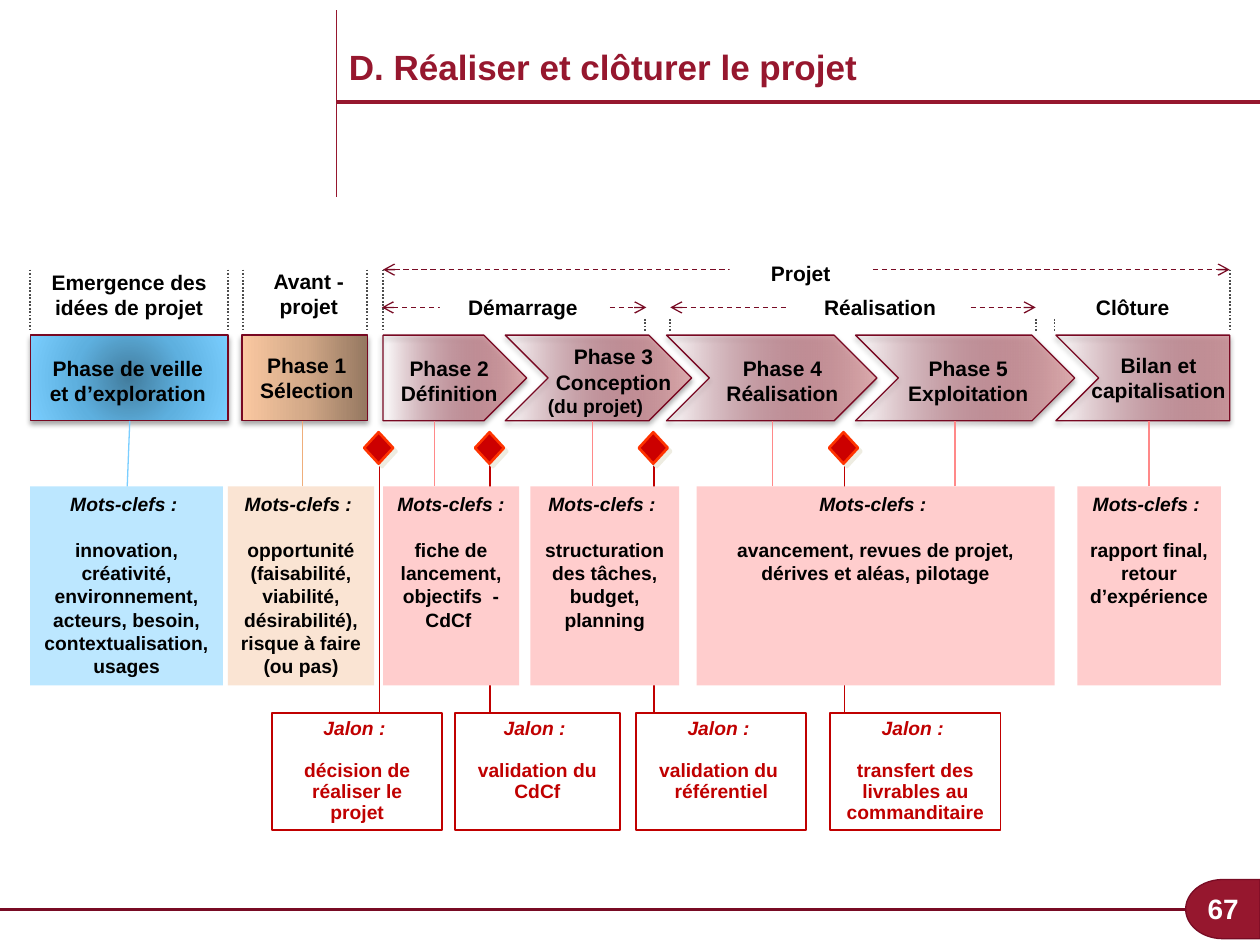
from dataclasses import dataclass
from typing import NamedTuple

import pptx
import pptx.dml.color
import pptx.enum.dml
import pptx.enum.shapes
import pptx.enum.text
import pptx.oxml
import pptx.oxml.ns
import pptx.util

Inches = pptx.util.Inches
Pt = pptx.util.Pt
Shape = pptx.enum.shapes.MSO_SHAPE
Align = pptx.enum.text.PP_ALIGN
Dash = pptx.enum.dml.MSO_LINE


class Box(NamedTuple):
    """A region of the page, in inches."""
    left: float
    top: float
    width: float
    height: float

    def inner(self, left, top, width, height):
        """Return a box placed relative to this one."""
        return Box(self.left + left, self.top + top, width, height)


@dataclass(frozen=True)
class Theme:
    """Colours and type sizes of the slide."""
    font: str = "Arial"
    title: int = 20
    number: int = 16
    label: int = 12
    note: int = 11
    black: str = "000000"
    white: str = "FFFFFF"
    wine: str = "96172E"
    dark_wine: str = "780B24"
    outline: str = "780822"
    grey: str = "4D4D4D"
    milestone: str = "C00000"
    diamond: str = "CC0000"
    diamond_edge: str = "FF3300"
    diamond_shadow: str = "EEECE1"
    sky: str = "BCE7FF"
    sky_line: str = "7ACEFF"
    sand: str = "FAE4D3"
    sand_line: str = "EFAE7B"
    rose: str = "FFCDCD"
    rose_line: str = "FF8989"
    blue_stops: tuple = ((0, "427C9D", 100), (50, "5EB0DF", 100), (100, "7ACEFF", 100))
    sand_stops: tuple = ((0, "947760", 100), (50, "D3A988", 100), (100, "FAC8A1", 100))
    wine_stops: tuple = ((0, "83001E", 0), (100, "DCACAE", 100))
    clipped_stops: tuple = ((0, "83001E", 0), (100, "CA8A91", 80))


THEME = Theme()
RADIAL = ('<a:path path="circle"><a:fillToRect l="50000" t="50000" '
          'r="50000" b="50000"/></a:path>')
RIGHTWARD = '<a:lin ang="0" scaled="0"/>'
LEFTWARD = '<a:lin ang="10800000" scaled="0"/>'


def rgb(color):
    """Return a colour object for a hex string."""
    return pptx.dml.color.RGBColor.from_string(color)


def xml(body):
    """Build a drawing element written without its namespace."""
    tag, rest = body[:body.index(" ")], body[body.index(" "):]
    return pptx.oxml.parse_xml(f"{tag} {pptx.oxml.ns.nsdecls('a')}{rest}")


def add_line(page, start, end, color, width=0.75, dash=None, arrows=False):
    """Add a straight line, with open arrowheads at both ends if asked."""
    line = page.shapes.add_connector(pptx.enum.shapes.MSO_CONNECTOR.STRAIGHT,
                                     *map(Inches, start + end))
    line.line.color.rgb = rgb(color)
    line.line.width = Pt(width)
    if dash is not None:
        line.line.dash_style = dash
    properties = line._element.spPr
    if arrows:
        outline = properties.find(pptx.oxml.ns.qn("a:ln"))
        for end_name in ("headEnd", "tailEnd"):
            outline.append(xml(f'<a:{end_name} type="arrow"/>'))
    properties.append(properties.makeelement(pptx.oxml.ns.qn("a:effectLst"), {}))


def style(shape, fill=None, line=None, width=0.75):
    """Set fill and outline and drop the shadow."""
    shape.shadow.inherit = False
    if fill:
        shape.fill.solid()
        shape.fill.fore_color.rgb = rgb(fill)
    else:
        shape.fill.background()
    if line:
        shape.line.color.rgb = rgb(line)
        shape.line.width = Pt(width)
    else:
        shape.line.fill.background()


def add_shape(page, kind, box, fill=None, line=None, width=0.75):
    """Add a styled preset shape."""
    shape = page.shapes.add_shape(kind, *map(Inches, box))
    style(shape, fill, line, width)
    return shape


def add_shadow(shape, color, alpha, blur, distance, angle):
    """Give a shape an outer shadow."""
    effects = shape._element.spPr.find(pptx.oxml.ns.qn("a:effectLst"))
    effects.append(xml(
        f'<a:outerShdw blurRad="{Pt(blur)}" dist="{Pt(distance)}" dir="{angle * 60000}">'
        f'<a:srgbClr val="{color}"><a:alpha val="{alpha * 1000}"/></a:srgbClr></a:outerShdw>'))


def add_gradient(shape, stops, direction):
    """Replace the empty fill of a shape by a gradient."""
    marks = "".join(f'<a:gs pos="{place * 1000}"><a:srgbClr val="{color}">'
                    f'<a:alpha val="{alpha * 1000}"/></a:srgbClr></a:gs>'
                    for place, color, alpha in stops)
    properties = shape._element.spPr
    properties.replace(properties.find(pptx.oxml.ns.qn("a:noFill")), xml(
        f'<a:gradFill rotWithShape="1"><a:gsLst>{marks}</a:gsLst>{direction}</a:gradFill>'))


def write(shape, texts, size, color=THEME.black, align=Align.CENTER, wrap=True,
          italic_first=False, gap=0, spacing=None, anchor=pptx.enum.text.MSO_ANCHOR.TOP):
    """Write bold paragraphs into a shape."""
    frame = shape.text_frame
    frame.word_wrap = wrap
    frame.vertical_anchor = anchor
    for index, text in enumerate(texts):
        para = frame.add_paragraph() if index else frame.paragraphs[0]
        para.alignment = align
        if spacing:
            para.line_spacing = spacing
        if index:
            para.space_before = Pt(gap)
        span = para.add_run()
        span.text = text
        span.font.name = THEME.font
        span.font.size = Pt(size)
        span.font.bold = True
        span.font.italic = italic_first and index == 0
        span.font.color.rgb = rgb(color)


def add_label(page, box, text, size=THEME.label, **options):
    """Add a text box with one bold paragraph."""
    write(page.shapes.add_textbox(*map(Inches, box)), [text], size, **options)


def add_title(page, box):
    """Draw the title and its crossed rules."""
    rule = box.top + 0.73
    add_line(page, (box.left, rule), (box.left + box.width, rule), THEME.wine, 2.25)
    add_line(page, (box.left, box.top), (box.left, box.top + box.height), THEME.wine, 1)
    add_label(page, box.inner(0, 0.23, 5.38, 0.44), "D. Réaliser et clôturer le projet",
              THEME.title, color=THEME.wine, align=Align.LEFT)


def add_footer(page, box):
    """Draw the bottom rule and the page number."""
    middle = box.top + 0.24
    add_line(page, (box.left, middle), (box.left + 9.41, middle), THEME.dark_wine, 2)
    tab = add_shape(page, Shape.FLOWCHART_DELAY, box.inner(9.41, 0, 0.59, box.height),
                    THEME.wine, THEME.dark_wine)
    tab.rotation = 180
    add_label(page, box.inner(7.6, 0.03, 2.33, 0.4), "67", THEME.number, color=THEME.white,
              align=Align.RIGHT, anchor=pptx.enum.text.MSO_ANCHOR.MIDDLE)


def add_spans(page, box):
    """Draw the dotted limits and the named spans above the phases."""
    bottom = box.top + box.height
    limits = [(x, 0.49) for x in (0.24, 1.81, 1.93, 2.91, 3.04, 9.76)]
    limits += [(x, 0.1) for x in (5.12, 5.32, 8.22, 8.37)]
    for x, height in limits:
        add_line(page, (box.left + x, bottom - height), (box.left + x, bottom),
                 THEME.grey, 1, Dash.ROUND_DOT)
    for start, end, y in ((3.04, 9.76, 0.12), (3.03, 5.13, 0.42), (5.32, 8.22, 0.42)):
        add_line(page, (box.left + start, box.top + y), (box.left + end, box.top + y),
                 THEME.dark_wine, dash=Dash.DASH, arrows=True)
    for x, y, width, text in ((5.79, 0, 1.13, "Projet"), (3.49, 0.27, 1.32, "Démarrage"),
                              (6.27, 0.27, 1.43, "Réalisation"), (8.57, 0.27, 0.84, "Clôture")):
        shape = add_shape(page, Shape.RECTANGLE, box.inner(x, y, width, 0.3), THEME.white)
        write(shape, [text], THEME.label)
    add_label(page, box.inner(0.3, 0.07, 1.45, 0.5), "Emergence des idées de projet")
    add_label(page, box.inner(2.04, 0.06, 0.82, 0.5), "Avant - projet")


def add_clipped_chevron(page, box):
    """Draw the last phase, a chevron cut straight on its right side."""
    notch = box.height / 2
    points = ((box.width, 0), (box.width, box.height), (0, box.height), (notch, notch))
    outline = page.shapes.build_freeform(Inches(box.left), Inches(box.top), 1)
    outline.add_line_segments([(Inches(box.left + x), Inches(box.top + y)) for x, y in points])
    shape = outline.convert_to_shape()
    style(shape, line=THEME.outline)
    return shape


def add_phases(page, box):
    """Draw the chain of phases and their names."""
    wine = (THEME.wine_stops, RIGHTWARD)
    phases = ((Shape.PENTAGON, 3.04, 1.14, *wine), (Shape.CHEVRON, 4.01, 1.48, *wine),
              (Shape.CHEVRON, 5.29, 1.67, *wine), (Shape.CHEVRON, 6.79, 1.74, *wine),
              (Shape.RECTANGLE, 0.24, 1.57, THEME.blue_stops, RADIAL),
              (Shape.RECTANGLE, 1.92, 1, THEME.sand_stops, LEFTWARD),
              (None, 8.38, 1.38, THEME.clipped_stops, RIGHTWARD))
    for kind, x, width, stops, direction in phases:
        place = box.inner(x, 0, width, box.height)
        if kind is None:
            shape = add_clipped_chevron(page, place)
        else:
            shape = add_shape(page, kind, place, line=THEME.outline)
        add_gradient(shape, stops, direction)
        add_shadow(shape, THEME.black, 35, 3.1, 1.8, 90)
    names = ((0.29, 0.11, 1.45, "Phase de veille et d’exploration"),
             (1.88, 0.09, 1.11, "Phase 1 Sélection"), (3.01, 0.11, 1.11, "Phase 2 Définition"),
             (4.3, 0.02, 1.14, "Phase 3 Conception"), (5.64, 0.11, 1.14, "Phase 4 Réalisation"),
             (7.05, 0.11, 1.27, "Phase 5 Exploitation"),
             (8.56, 0.09, 1.27, "Bilan et capitalisation"))
    for x, y, width, text in names:
        add_label(page, box.inner(x, y, width, 0.5), text)
    add_label(page, box.inner(4.25, 0.42, 0.96, 0.29), "(du projet)", THEME.note,
              align=Align.LEFT, wrap=False)


def add_keywords(page, box):
    """Draw the keyword cards and their links up to the phases."""
    rose = (THEME.rose, THEME.rose_line)
    cards = (
        (0.24, 1.53, THEME.sky, THEME.sky_line, ((1.01, 1.03),), "innovation, créativité, "
         "environnement, acteurs, besoin, contextualisation, usages"),
        (1.81, 1.16, THEME.sand, THEME.sand_line, ((2.4, 2.4),),
         "opportunité (faisabilité, viabilité, désirabilité), risque à faire (ou pas)"),
        (3.04, 1.08, *rose, ((3.45, 3.45),), "fiche de lancement, objectifs  - CdCf "),
        (4.21, 1.18, *rose, ((4.7, 4.7),), "structuration des tâches, budget, planning"),
        (5.53, 2.84, *rose, ((6.13, 6.13), (7.58, 7.58)),
         "avancement, revues de projet, dérives et aléas, pilotage"),
        (8.55, 1.14, *rose, ((9.12, 9.12),), "rapport final, retour d’expérience"))
    for x, width, fill, line, links, text in cards:
        card = add_shape(page, Shape.RECTANGLE, box.inner(x, 0, width, box.height), fill)
        write(card, ["Mots-clefs : ", text], THEME.note, italic_first=True, gap=13)
        for low, high in links:
            add_line(page, (box.left + low, box.top), (box.left + high, box.top - 0.52), line)


def add_milestones(page, box):
    """Draw the milestone diamonds, their stems and their cards."""
    milestones = ((3.01, 2.16, 1.35, "décision de réaliser le projet"),
                  (3.89, 3.61, 1.31, "validation du CdCf"),
                  (5.19, 5.05, 1.35, "validation du  référentiel"),
                  (6.7, 6.59, 1.35, "transfert des livrables au commanditaire"))
    for center, x, width, text in milestones:
        add_line(page, (box.left + center, box.top + 2.23), (box.left + center, box.top + 0.25),
                 THEME.milestone)
        diamond = add_shape(page, Shape.DIAMOND, box.inner(center - 0.12, 0, 0.23, 0.25),
                            THEME.diamond, THEME.diamond_edge, 1.5)
        add_shadow(diamond, THEME.diamond_shadow, 100, 0, 2.8, 45)
        card = add_shape(page, Shape.RECTANGLE, box.inner(x, 2.23, width, 0.93),
                         line=THEME.milestone, width=1)
        write(card, ["Jalon : ", text], THEME.note, THEME.milestone,
              italic_first=True, gap=12, spacing=0.9)


def main():
    """Build the slide and save it."""
    deck = pptx.Presentation()
    deck.slide_width, deck.slide_height = Inches(10), Inches(7.5)
    page = deck.slides.add_slide(deck.slide_layouts[6])
    add_footer(page, Box(0, 6.98, 10, 0.47))
    add_milestones(page, Box(0, 3.43, 10, 3.16))
    add_spans(page, Box(0, 2.02, 10, 0.61))
    add_phases(page, Box(0, 2.66, 10, 0.68))
    add_keywords(page, Box(0, 3.86, 10, 1.58))
    add_title(page, Box(2.67, 0.08, 7.33, 1.48))
    deck.save("out.pptx")


if __name__ == "__main__":
    main()
